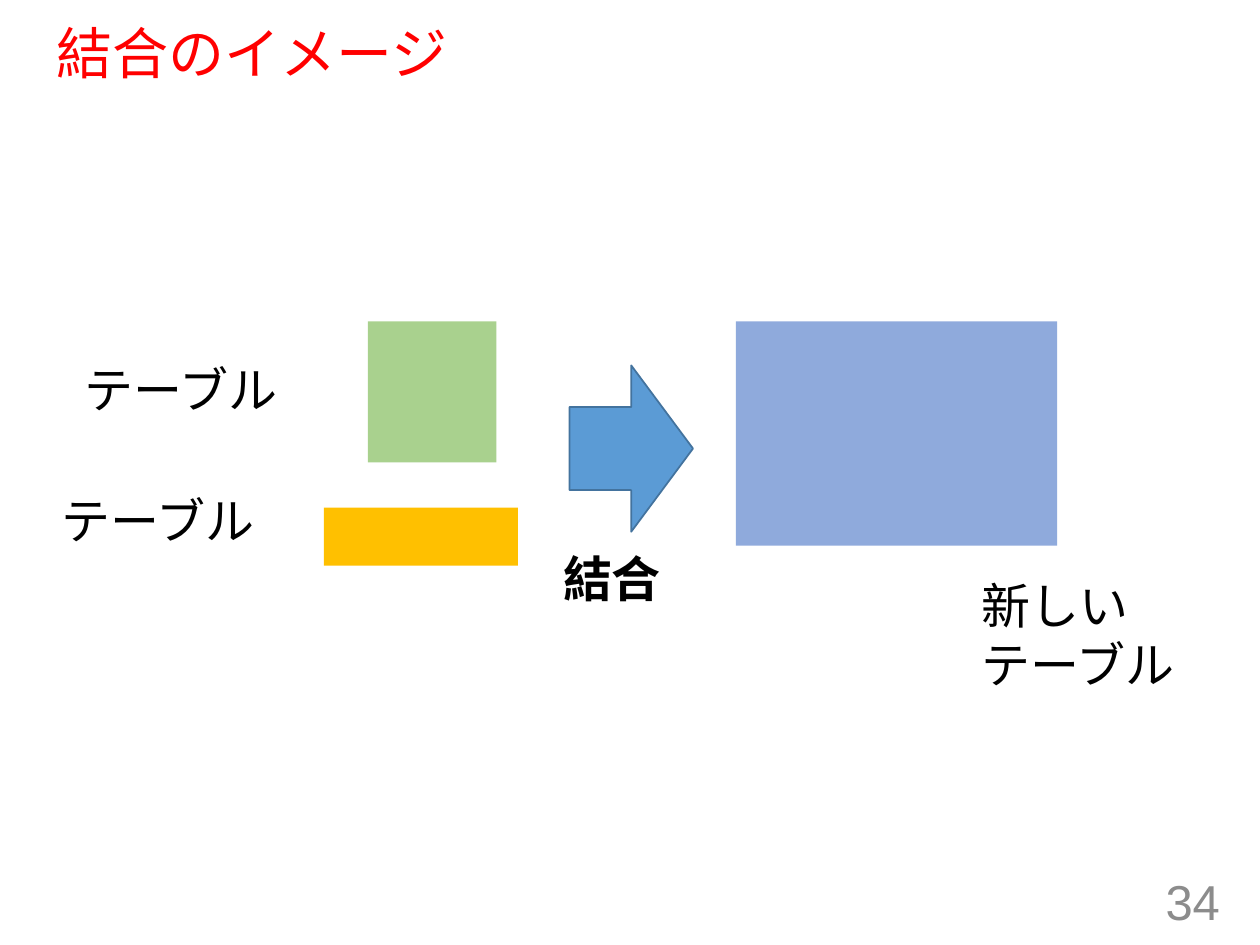
from dataclasses import dataclass

from pptx import Presentation
from pptx.dml.color import RGBColor
from pptx.enum.shapes import MSO_SHAPE
from pptx.enum.text import MSO_ANCHOR, PP_ALIGN
from pptx.util import Inches, Pt


@dataclass(frozen=True)
class Theme:
    font: str = "Arial"
    title_size: int = 32
    body_size: int = 28
    title: str = "FF0000"
    text: str = "000000"
    number: str = "8C8C8C"
    first_table: str = "A9D18E"
    second_table: str = "FFC000"
    joined_table: str = "8FAADC"
    arrow: str = "5B9BD5"
    arrow_line: str = "43739E"


THEME = Theme()
COLS, ROWS = 100, 75
SLIDE_W, SLIDE_H = Inches(10), Inches(7.5)
TABLE_TOP = 25.5
LABEL_W, LABEL_H = 21.1, 6.9


def grid_box(col, row, cols, rows):
    x_unit, y_unit = SLIDE_W / COLS, SLIDE_H / ROWS
    return [round(n) for n in (col * x_unit, row * y_unit, cols * x_unit, rows * y_unit)]


def add_block(slide, kind, box, fill, line=None):
    sp = slide.shapes.add_shape(kind, *grid_box(*box))
    sp.shadow.inherit = False
    sp.fill.solid()
    sp.fill.fore_color.rgb = RGBColor.from_string(fill)
    if line:
        sp.line.color.rgb = RGBColor.from_string(line)
        sp.line.width = Pt(1)
    else:
        sp.line.fill.background()


def add_text(slide, box, lines, color=THEME.text, size=THEME.body_size, bold=False,
             align=PP_ALIGN.LEFT, anchor=MSO_ANCHOR.TOP, spacing=None):
    tf = slide.shapes.add_textbox(*grid_box(*box)).text_frame
    tf.word_wrap = True
    tf.vertical_anchor = anchor
    tf.text = "\n".join(lines)
    for p in tf.paragraphs:
        p.alignment = align
        p.line_spacing = spacing
        p.font.name = THEME.font
        p.font.size = Pt(size)
        p.font.bold = bold
        p.font.color.rgb = RGBColor.from_string(color)


def main():
    prs = Presentation()
    prs.slide_width, prs.slide_height = SLIDE_W, SLIDE_H
    slide = prs.slides.add_slide(prs.slide_layouts[6])

    add_text(slide, (3.5, 1.9, 92.5, 5.1), ["結合のイメージ"], THEME.title,
             THEME.title_size, anchor=MSO_ANCHOR.MIDDLE, spacing=0.9)

    rect = MSO_SHAPE.RECTANGLE
    add_block(slide, rect, (29.2, TABLE_TOP, 10.2, 11.2), THEME.first_table)
    add_block(slide, rect, (25.7, 40.3, 15.4, 4.6), THEME.second_table)
    add_block(slide, MSO_SHAPE.RIGHT_ARROW, (45.2, 29, 9.8, 13.2),
              THEME.arrow, THEME.arrow_line)
    add_block(slide, rect, (58.4, TABLE_TOP, 25.5, 17.8), THEME.joined_table)

    for col, row in ((5.7, 28), (3.9, 38.4)):
        add_text(slide, (col, row, LABEL_W, LABEL_H), ["テーブル"])
    add_text(slide, (76.9, 45.2, LABEL_W, 12.2), ["新しい", "テーブル"])
    add_text(slide, (43.7, 43, 12.1, LABEL_H), ["結合"], bold=True)

    add_text(slide, (75.3, 69.5, 22.5, 4), ["34"], THEME.number,
             align=PP_ALIGN.RIGHT, anchor=MSO_ANCHOR.MIDDLE)
    prs.save("out.pptx")


if __name__ == "__main__":
    main()
